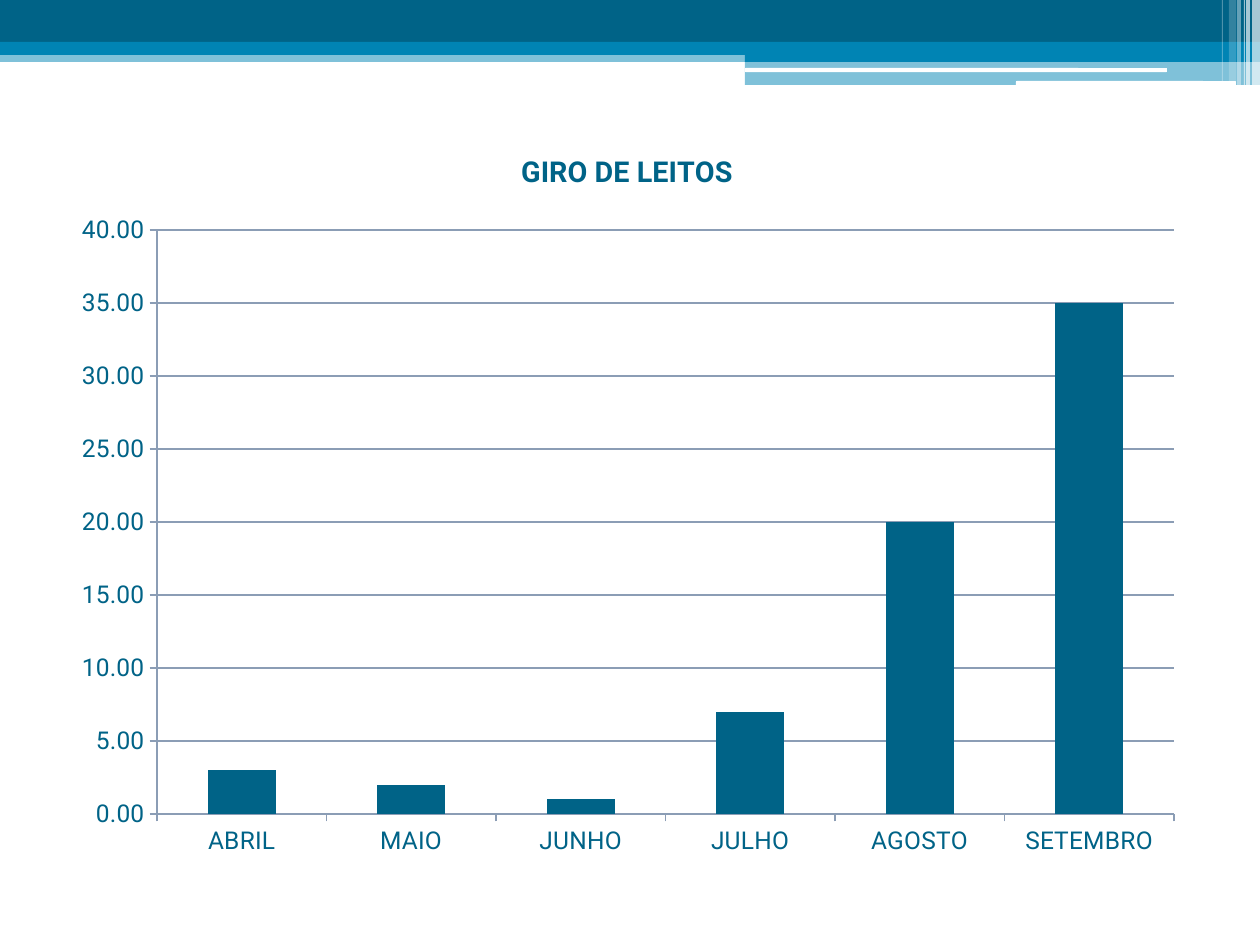
from dataclasses import dataclass

from lxml import etree
from pptx import Presentation
from pptx import util as u
from pptx.chart.data import CategoryChartData
from pptx.dml.color import RGBColor
from pptx.enum import chart as charts
from pptx.enum import shapes
from pptx.oxml.ns import qn

SCALE = 914400 / 126


@dataclass(frozen=True)
class Theme:
    """Hold the colours and type sizes of the deck."""
    dark: str = "006387"
    bright: str = "0084B4"
    white: str = "FFFFFF"
    rule: str = "8B9DB5"
    font: str = "Roboto"
    label_size: int = 14
    title_size: float = 16.4


THEME = Theme()
TURNOVER = {"ABRIL": 3, "MAIO": 2, "JUNHO": 1,
            "JULHO": 7, "AGOSTO": 20, "SETEMBRO": 35}


def px(length):
    """Turn px into EMU."""
    return u.Emu(round(length * SCALE))


def add_bar(page, box, color, opacity=100, rounded=False):
    """Draw one borderless bar in box."""
    kind = shapes.MSO_SHAPE.ROUNDED_RECTANGLE if rounded else shapes.MSO_SHAPE.RECTANGLE
    bar = page.shapes.add_shape(kind, *map(px, box))
    bar.shadow.inherit = False
    bar.line.fill.background()
    bar.fill.solid()
    bar.fill.fore_color.rgb = RGBColor.from_string(color)
    if opacity < 100:
        tint = bar.fill._xPr.find(".//" + qn("a:srgbClr"))
        etree.SubElement(tint, qn("a:alpha"), val=str(opacity * 1000))


def add_banner(page, box):
    """Draw the banner: full bands, right-hand steps and pale stripes."""
    left, top, width, height = box
    right, step = left + width, left + 745
    add_bar(page, (left, top + 50, width, 12), THEME.bright, 50)
    add_bar(page, (left, top, width, 43), THEME.dark)
    add_bar(page, (left, top + 42, width, 13), THEME.bright)
    add_bar(page, (step, top + 49, right - step, 13), THEME.bright)
    add_bar(page, (step, top + 61, right - step, 24), THEME.bright, 50)
    add_bar(page, (step, top + 68, 422, 4), THEME.white, rounded=True)
    add_bar(page, (left + 1016, top + 81, 220, 5), THEME.white, rounded=True)
    stripes = [(8, 8, 0, 65), (14, 4, 0, 65), (16, 1, 0, 60),
               (23, 4, 0, 40), (31, 7, 5, 20), (38, 1, 5, 30)]
    for offset, thickness, cut, opacity in stripes:
        add_bar(page, (right - offset, top, thickness, height - cut), THEME.white, opacity)


def format_font(font, size, bold=False):
    """Apply the theme's typeface and text colour."""
    font.name, font.size, font.bold = THEME.font, u.Pt(size), bold
    font.color.rgb = RGBColor.from_string(THEME.dark)


def format_line(line):
    """Apply the theme's rule to an axis or grid line."""
    line.color.rgb = RGBColor.from_string(THEME.rule)
    line.width = u.Pt(1)


def place_part(part, index, box, area, **settings):
    """Place a chart part at area, in px within the chart's box."""
    for old in part.findall(qn("c:layout")):
        part.remove(old)
    layout = etree.Element(qn("c:layout"))
    manual = etree.SubElement(layout, qn("c:manualLayout"))
    settings.update(xMode="edge", yMode="edge")
    settings.update(zip("xywh", (length / box[2 + i % 2] for i, length in enumerate(area))))
    for name, value in settings.items():
        etree.SubElement(manual, qn("c:" + name), val=str(value))
    part.insert(index, layout)


def add_turnover_chart(page, box, title, values):
    """Draw the titled column chart of values in box."""
    data = CategoryChartData(number_format="0.00")
    data.categories = list(values)
    data.add_series(title, list(values.values()))
    chart = page.shapes.add_chart(
        charts.XL_CHART_TYPE.COLUMN_CLUSTERED, *map(px, box), data).chart
    chart.has_legend = False
    format_font(chart.font, THEME.label_size)

    chart.has_title = True
    para = chart.chart_title.text_frame.paragraphs[0]
    span = para.add_run()
    span.text = title
    format_font(span.font, THEME.title_size, bold=True)
    chart.chart_title.include_in_layout = False
    place_part(chart.chart_title._element, 1, box, (457, 19))

    plot = chart.plots[0]
    plot.gap_width = 150
    plot.vary_by_categories = False
    fill = plot.series[0].format.fill
    fill.solid()
    fill.fore_color.rgb = RGBColor.from_string(THEME.dark)
    place_part(chart._chartSpace.chart.plotArea, 0, box, (98, 101, 1017, 584),
               layoutTarget="inner")

    for axis in (chart.category_axis, chart.value_axis):
        axis.major_tick_mark = charts.XL_TICK_MARK.OUTSIDE
        axis.minor_tick_mark = charts.XL_TICK_MARK.NONE
        format_line(axis.format.line)
    scale = chart.value_axis
    scale.minimum_scale, scale.maximum_scale, scale.major_unit = 0, 40, 5
    scale.tick_labels.number_format = "0.00"
    scale.tick_labels.number_format_is_linked = False
    scale.has_major_gridlines = True
    format_line(scale.major_gridlines.format.line)


def main():
    """Build and save the deck."""
    deck = Presentation()
    deck.slide_width, deck.slide_height = px(1260), px(945)
    page = deck.slides.add_slide(deck.slide_layouts[6])
    add_banner(page, (0, 0, 1260, 86))
    add_turnover_chart(page, (59, 129, 1138, 743), "GIRO DE LEITOS", TURNOVER)
    deck.save("out.pptx")


if __name__ == "__main__":
    main()
